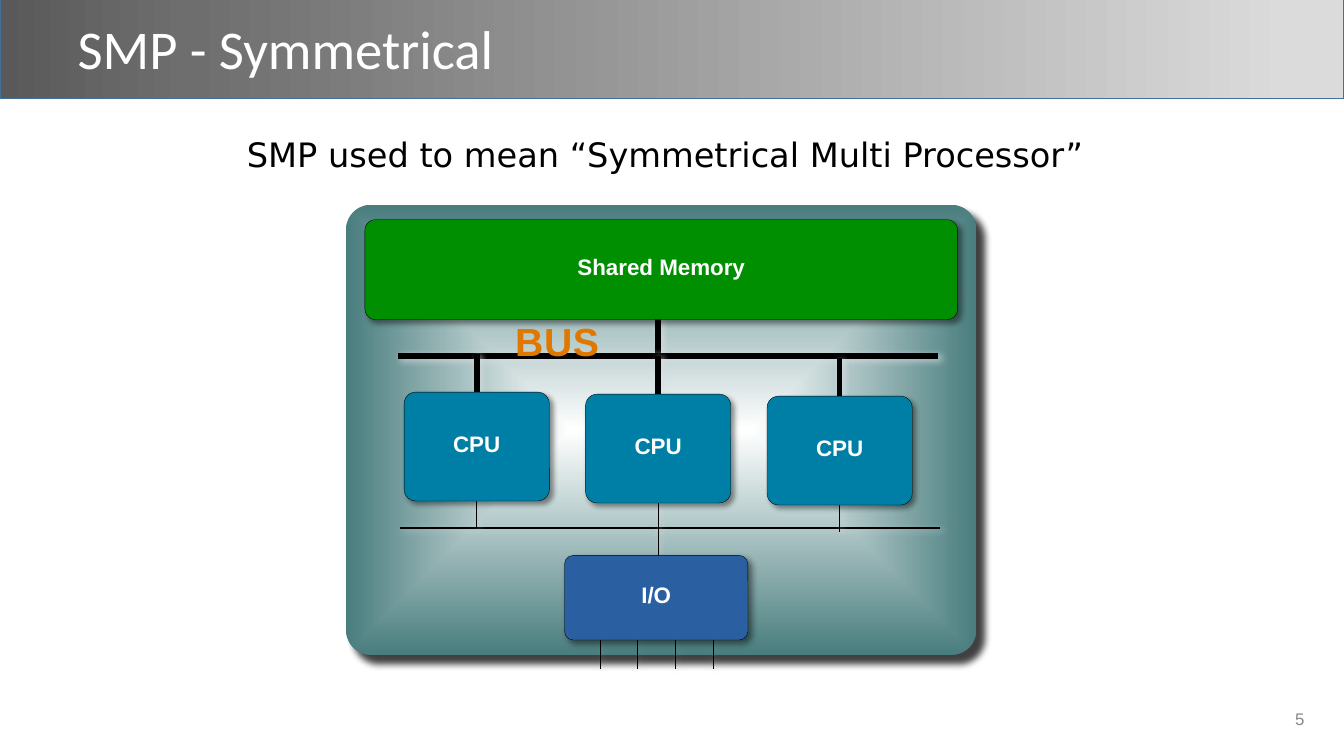
from lxml import etree
from pptx import Presentation
from pptx.dml.color import RGBColor
from pptx.enum.shapes import MSO_CONNECTOR, MSO_SHAPE
from pptx.enum.text import MSO_ANCHOR, PP_ALIGN
from pptx.oxml import parse_xml
from pptx.oxml.ns import nsdecls, qn
from pptx.util import Inches, Pt

RECT, ROUND = MSO_SHAPE.RECTANGLE, MSO_SHAPE.ROUNDED_RECTANGLE
STRAIGHT = MSO_CONNECTOR.STRAIGHT
MIDDLE, TOP = MSO_ANCHOR.MIDDLE, MSO_ANCHOR.TOP
LEFT, CENTER, RIGHT = PP_ALIGN.LEFT, PP_ALIGN.CENTER, PP_ALIGN.RIGHT

TITLE = "SMP - Symmetrical"
CAPTION = "SMP used to mean “Symmetrical Multi Processor”"
BUS, NUMBER = "BUS", "5"
CPUS = ["CPU", "CPU", "CPU"]
PIN_COUNT = 4

C = {
    "white": "FFFFFF", "black": "000000", "grey": "888888",
    "banner line": "42719B", "teal": "497D7E", "glow": "DDE1E7",
    "memory": "008F00", "cpu": "007FA6", "io": "2A60A1", "bus": "E07800",
}
BANNER_STOPS = [(0, "595959"), (14, "6E6E6E"), (96, "DBDBDB")]
PANEL_STOPS = [(0, C["white"]), (100, C["teal"])]

# Shadows: colour, opacity %, blur pt, distance pt
PANEL_SHADOW = (C["black"], 75, 5, 8)
BOX_SHADOW = (C["black"], 43, 4, 3)
IO_SHADOW = (C["black"], 47, 5, 3)
WIRE_SHADOW = (C["glow"], 75, 5, 2)

# The grid has ten cells to the inch; every length below is in cells.
CELL = Inches(0.1)
COLS, ROWS = 133.33, 75
PANEL = (34.3, 20.3, 62.6, 44.7)
MEMORY = (36.2, 21.8, 58.8, 9.9)
IO = (56, 55.1, 18.2, 8.4)
CPU_X, CPU_Y, CPU_W, CPU_H = 40.1, 38.9, 14.4, 10.8
CPU_STEP, CPU_DROP = 18, 0.2
BUS_X, BUS_Y, BUS_W = 39.5, 35.3, 53.6
IO_BUS_X, IO_BUS_Y = 39.7, 52.4
PIN_X, PIN_Y, PIN_STEP, PIN_H = 59.5, 63.5, 3.74, 2.9
THICK, THIN, HAIR = 4, 1, 0.25


def cells(*values):
    return [round(v * CELL) for v in values]


def rgb(name):
    return RGBColor.from_string(C[name])


def set_gradient(sp, stops, direction):
    """Fill a shape with colour stops; direction is a DrawingML element."""
    sp.fill.background()
    gs = "".join(f'<a:gs pos="{pos * 1000}"><a:srgbClr val="{color}"/></a:gs>'
                 for pos, color in stops)
    grad = parse_xml(f'<a:gradFill {nsdecls("a")} rotWithShape="1">'
                     f'<a:gsLst>{gs}</a:gsLst>{direction}</a:gradFill>')
    spPr = sp._element.spPr
    spPr.replace(spPr.find(qn("a:noFill")), grad)


def add_shadow(sp, shadow):
    """Append a 45-degree shadow; call it after fill and line are set."""
    color, opacity, blur, dist = shadow
    spPr = sp._element.spPr
    for old in spPr.findall(qn("a:effectLst")):
        spPr.remove(old)
    effects = etree.SubElement(spPr, qn("a:effectLst"))
    outer = etree.SubElement(
        effects, qn("a:outerShdw"), blurRad=str(Pt(blur)), dist=str(Pt(dist)),
        dir="2700000", algn="tl", rotWithShape="0")
    clr = etree.SubElement(outer, qn("a:srgbClr"), val=color)
    etree.SubElement(clr, qn("a:alpha"), val=str(opacity * 1000))


def write(sp, text, size, font, color, bold=False, align=LEFT,
          anchor=MIDDLE, margin=0.04, spacing=None):
    tf = sp.text_frame
    tf.word_wrap = True
    tf.vertical_anchor = anchor
    tf.margin_left = tf.margin_right = Inches(margin)
    tf.margin_top = tf.margin_bottom = Inches(margin)
    p = tf.paragraphs[0]
    p.text = text
    p.alignment = align
    p.line_spacing = spacing
    p.font.size, p.font.name, p.font.bold = Pt(size), font, bold
    p.font.color.rgb = rgb(color)
    return p


def add_text(slide, box, *args, **kwargs):
    return write(slide.shapes.add_textbox(*cells(*box)), *args, **kwargs)


def add_wire(slide, x1, y1, x2, y2, width):
    line = slide.shapes.add_connector(STRAIGHT, *cells(x1, y1, x2, y2))
    line.line.color.rgb = rgb("black")
    line.line.width = Pt(width)
    add_shadow(line, WIRE_SHADOW)


def add_box(slide, box, label, color, shadow=BOX_SHADOW):
    sp = slide.shapes.add_shape(ROUND, *cells(*box))
    sp.adjustments[0] = 0.105
    sp.fill.solid()
    sp.fill.fore_color.rgb = rgb(color)
    sp.line.color.rgb = rgb("black")
    sp.line.width = Pt(HAIR)
    add_shadow(sp, shadow)
    write(sp, label, 16, "Arial", "white", bold=True, align=CENTER, spacing=0.7)


def add_header(slide):
    banner = slide.shapes.add_shape(RECT, *cells(0, -0.5, COLS, 10.3))
    banner.shadow.inherit = False
    set_gradient(banner, BANNER_STOPS, '<a:lin ang="0" scaled="0"/>')
    banner.line.color.rgb = rgb("banner line")
    banner.line.width = Pt(THIN)
    title = slide.shapes.title
    title._element.addprevious(banner._element)
    title.left, title.top, title.width, title.height = cells(7.7, -0.7, 84.2, 11.6)
    write(title, TITLE, 39, "Calibri", "white", margin=0, spacing=0.9)


def add_panel(slide):
    panel = slide.shapes.add_shape(ROUND, *cells(*PANEL))
    panel.adjustments[0] = 0.058
    set_gradient(panel, PANEL_STOPS,
                 '<a:path path="shape"><a:fillToRect l="50000" t="50000" '
                 'r="50000" b="50000"/></a:path>')
    panel.line.fill.background()
    add_shadow(panel, PANEL_SHADOW)


def add_diagram(slide):
    add_panel(slide)
    middle = CPU_X + CPU_STEP + CPU_W / 2
    add_wire(slide, middle, 31.4, middle, BUS_Y + 0.2, THICK)
    add_wire(slide, BUS_X, BUS_Y, BUS_X + BUS_W, BUS_Y, THICK)
    add_wire(slide, IO_BUS_X, IO_BUS_Y, IO_BUS_X + BUS_W, IO_BUS_Y, THIN)
    for i, label in enumerate(CPUS):
        x, y = CPU_X + i * CPU_STEP, CPU_Y + i * CPU_DROP
        mid = x + CPU_W / 2
        end = 56.5 if mid == middle else IO_BUS_Y + i * CPU_DROP
        add_wire(slide, mid, y - 3.8, mid, y + 0.3, THICK)
        add_wire(slide, mid, y + CPU_H - 1.2, mid, end, THIN)
        add_box(slide, (x, y, CPU_W, CPU_H), label, "cpu")
    add_box(slide, MEMORY, "Shared Memory", "memory")
    add_box(slide, IO, "I/O", "io", IO_SHADOW)
    for i in range(PIN_COUNT):
        x = PIN_X + i * PIN_STEP
        add_wire(slide, x, PIN_Y, x, PIN_Y + PIN_H, HAIR)
    p = add_text(slide, (50.7, 31.1, 9.8, 5.2), BUS, 28, "Arial", "bus",
                 bold=True, anchor=TOP)
    p.runs[0].font._element.set("spc", "50")


def main():
    prs = Presentation()
    prs.slide_width, prs.slide_height = cells(COLS, ROWS)
    slide = prs.slides.add_slide(prs.slide_layouts[5])
    add_header(slide)
    add_text(slide, (99.9, 69.9, 30, 2.9), NUMBER, 12, "Arial", "grey",
             align=RIGHT, margin=0.05)
    add_diagram(slide)
    add_text(slide, (24.1, 12.9, 90, 4.9), CAPTION, 24, "DejaVu Sans", "black",
             anchor=TOP)
    prs.save("out.pptx")


if __name__ == "__main__":
    main()
